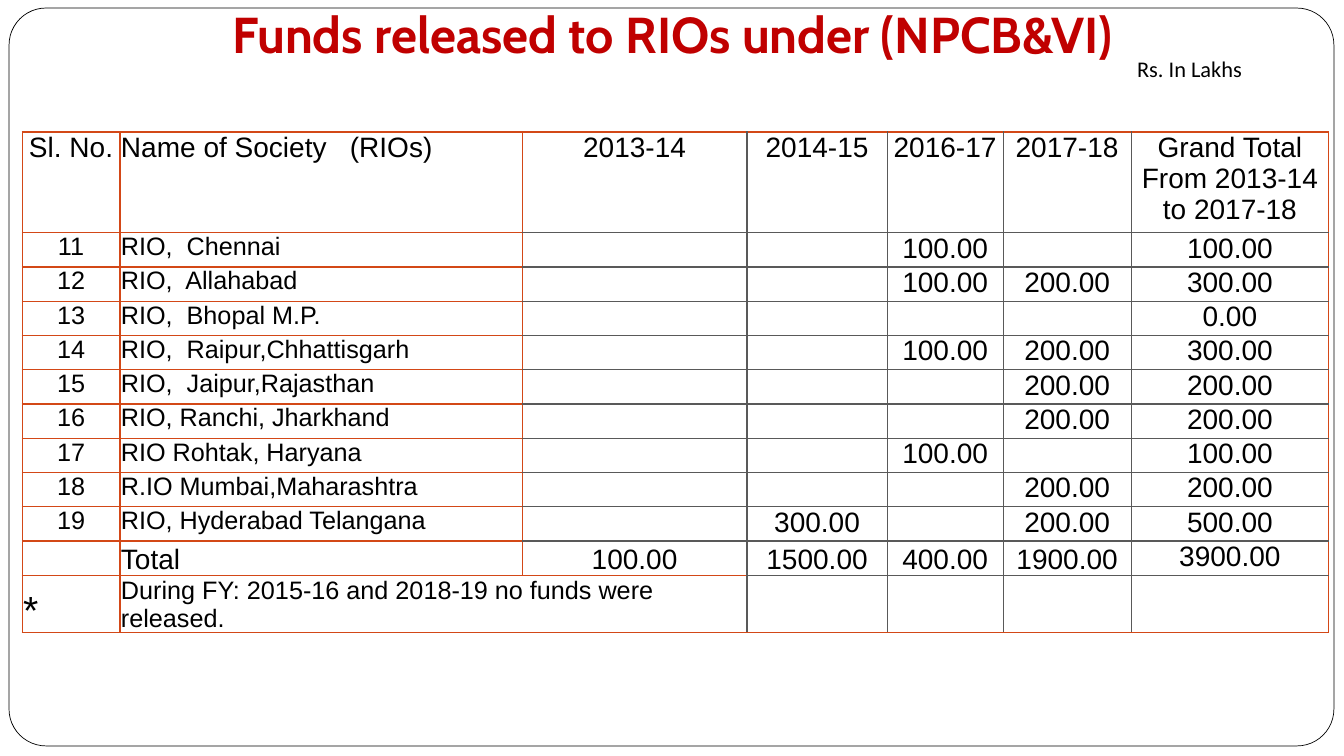
"""Build the slide of funds released to RIOs as a bordered table."""
from typing import NamedTuple

from lxml.etree import SubElement
from pptx import Presentation
from pptx.dml.color import RGBColor
from pptx.enum.shapes import MSO_SHAPE
from pptx.enum.text import MSO_ANCHOR, MSO_AUTO_SIZE, PP_ALIGN
from pptx.oxml.ns import qn
from pptx.util import Inches, Pt

BLACK = RGBColor(0x00, 0x00, 0x00)
WHITE = RGBColor(0xFF, 0xFF, 0xFF)
RED = RGBColor(0xC0, 0x00, 0x00)
ORANGE = RGBColor(0xD3, 0x48, 0x17)
GRAY = RGBColor(0x59, 0x59, 0x59)

COLUMN_WIDTHS = (0.97, 3.99, 2.23, 1.39, 1.15, 1.27, 1.96)
HEADER_HEIGHT, ROW_HEIGHT, NOTE_HEIGHT = 1, 0.34, 0.57
NAME_COLUMN = 1
ORANGE_VERTICALS = (0, 1, 2, len(COLUMN_WIDTHS))


class FundRow(NamedTuple):
    number: str
    society: str
    year_2013: str = ""
    year_2014: str = ""
    year_2016: str = ""
    year_2017: str = ""
    total: str = ""


HEADER = FundRow("Sl. No.", "Name of Society   (RIOs)", "2013-14", "2014-15",
                 "2016-17", "2017-18", "Grand Total From 2013-14 to 2017-18")
SOCIETIES = (
    FundRow("11", "RIO,  Chennai", year_2016="100.00", total="100.00"),
    FundRow("12", "RIO,  Allahabad", year_2016="100.00", year_2017="200.00", total="300.00"),
    FundRow("13", "RIO,  Bhopal M.P.", total="0.00"),
    FundRow("14", "RIO,  Raipur,Chhattisgarh", year_2016="100.00", year_2017="200.00",
            total="300.00"),
    FundRow("15", "RIO,  Jaipur,Rajasthan", year_2017="200.00", total="200.00"),
    FundRow("16", "RIO, Ranchi, Jharkhand", year_2017="200.00", total="200.00"),
    FundRow("17", "RIO Rohtak, Haryana", year_2016="100.00", total="100.00"),
    FundRow("18", "R.IO Mumbai,Maharashtra", year_2017="200.00", total="200.00"),
    FundRow("19", "RIO, Hyderabad Telangana", year_2014="300.00", year_2017="200.00",
            total="500.00"),
)
TOTALS = FundRow("", "Total", "100.00", "1500.00", "400.00", "1900.00", "3900.00")
NOTE = FundRow("*", "During FY: 2015-16 and 2018-19 no funds were released.")
ROWS = (HEADER, *SOCIETIES, TOTALS, NOTE)
TOTALS_INDEX, NOTE_INDEX = len(ROWS) - 2, len(ROWS) - 1


def add_run(paragraph, text: str, size: float, font: str, color: RGBColor,
            bold: bool = False) -> None:
    run = paragraph.add_run()
    run.text = text
    run.font.size = Pt(size)
    run.font.name = font
    run.font.bold = bold
    run.font.color.rgb = color


def text_size(row: int, column: int) -> int:
    if row == NOTE_INDEX:
        return 28 if column == 0 else 18
    is_society = 0 < row < TOTALS_INDEX
    return 18 if is_society and column <= NAME_COLUMN else 20


def add_border(cell, side: str, color: RGBColor) -> None:
    properties = cell._tc.get_or_add_tcPr()
    line = SubElement(properties, qn(f"a:{side}"), w=str(Pt(1)))
    fill = SubElement(line, qn("a:solidFill"))
    SubElement(fill, qn("a:srgbClr"), val=str(color))


def add_borders(cell, row: int, column: int) -> None:
    right_edge = column + (cell.span_width if cell.is_merge_origin else 1)
    for side, edge in (("lnL", column), ("lnR", right_edge)):
        add_border(cell, side, ORANGE if edge in ORANGE_VERTICALS else GRAY)
    for side, edge in (("lnT", row), ("lnB", row + 1)):
        is_orange = column <= NAME_COLUMN or edge in (0, len(ROWS))
        add_border(cell, side, ORANGE if is_orange else GRAY)


def fill_cell(cell, row: int, column: int, text: str) -> None:
    cell.margin_left = cell.margin_right = Inches(0.01)
    cell.margin_top = cell.margin_bottom = 0
    at_bottom = row >= TOTALS_INDEX and (row, column) != (TOTALS_INDEX, len(COLUMN_WIDTHS) - 1)
    cell.vertical_anchor = MSO_ANCHOR.BOTTOM if at_bottom else MSO_ANCHOR.TOP
    add_borders(cell, row, column)
    cell.fill.background()
    paragraph = cell.text_frame.paragraphs[0]
    is_left = column == NAME_COLUMN or row == NOTE_INDEX
    paragraph.alignment = PP_ALIGN.LEFT if is_left else PP_ALIGN.CENTER
    if text:
        add_run(paragraph, text, text_size(row, column), "Arial", BLACK)


def add_funds_table(slide) -> None:
    heights = [HEADER_HEIGHT] + [ROW_HEIGHT] * (len(ROWS) - 2) + [NOTE_HEIGHT]
    table = slide.shapes.add_table(
        len(ROWS), len(COLUMN_WIDTHS), Inches(0.22), Inches(1.31),
        Inches(sum(COLUMN_WIDTHS)), Inches(sum(heights))).table
    table.first_row = table.horz_banding = False
    for column, width in zip(table.columns, COLUMN_WIDTHS):
        column.width = Inches(width)
    for table_row, height in zip(table.rows, heights):
        table_row.height = Inches(height)
    table.cell(NOTE_INDEX, 1).merge(table.cell(NOTE_INDEX, 2))
    for row, fund_row in enumerate(ROWS):
        for column, text in enumerate(fund_row):
            fill_cell(table.cell(row, column), row, column, text)


def add_title(slide) -> None:
    title = slide.shapes.title
    title.left, title.top = Inches(0.67), 0
    title.width, title.height = Inches(12), Inches(0.67)
    frame = title.text_frame
    frame.auto_size = MSO_AUTO_SIZE.NONE
    frame.vertical_anchor = MSO_ANCHOR.MIDDLE
    frame.paragraphs[0].alignment = PP_ALIGN.CENTER
    add_run(frame.paragraphs[0], "Funds released to RIOs under (NPCB&VI)", 36, "Cabin", RED, True)


def add_panel(slide) -> None:
    panel = slide.shapes.add_shape(MSO_SHAPE.ROUNDED_RECTANGLE, Inches(0.09), Inches(0.08),
                                   Inches(13.14), Inches(7.32))
    panel.adjustments[0] = 0.05
    panel.shadow.inherit = False
    panel.fill.solid()
    panel.fill.fore_color.rgb = WHITE
    panel.line.color.rgb = BLACK
    panel.line.width = Pt(0.5)
    slide.shapes.title.element.addprevious(panel.element)


def add_unit_label(slide) -> None:
    label = slide.shapes.add_textbox(Inches(11.18), Inches(0.5), Inches(1.25), Inches(0.37))
    label.text_frame.word_wrap = False
    label.text_frame.auto_size = MSO_AUTO_SIZE.SHAPE_TO_FIT_TEXT
    add_run(label.text_frame.paragraphs[0], "Rs. In Lakhs", 16, "Calibri", BLACK)


def main() -> None:
    presentation = Presentation()
    presentation.slide_width, presentation.slide_height = Inches(13.33), Inches(7.5)
    slide = presentation.slides.add_slide(presentation.slide_layouts.get_by_name("Title Only"))
    add_panel(slide)
    add_funds_table(slide)
    add_title(slide)
    add_unit_label(slide)
    presentation.save("out.pptx")


if __name__ == "__main__":
    main()
